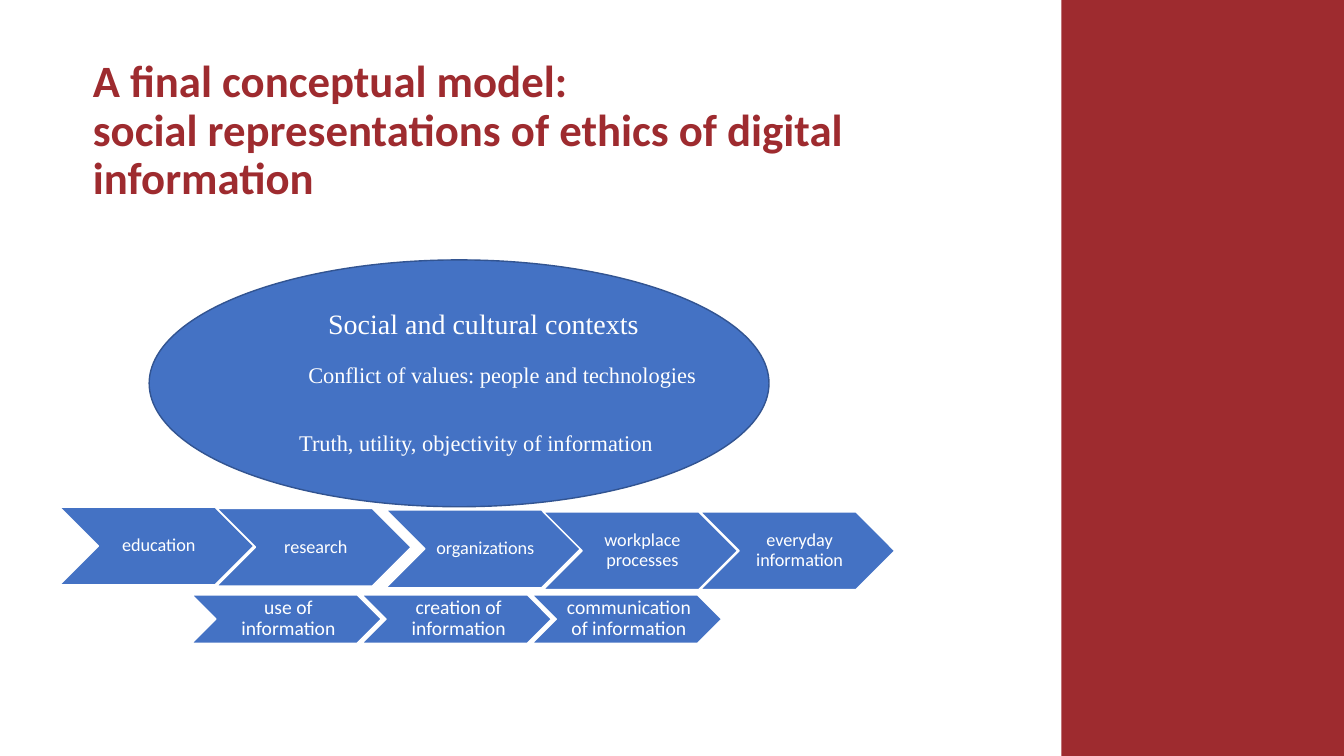
from pptx import Presentation
from pptx.dml.color import RGBColor
from pptx.enum.shapes import MSO_SHAPE
from pptx.enum.text import MSO_ANCHOR, MSO_AUTO_SIZE, PP_ALIGN
from pptx.util import Cm, Pt

RECT, OVAL, CHEVRON = MSO_SHAPE.RECTANGLE, MSO_SHAPE.OVAL, MSO_SHAPE.CHEVRON
MIDDLE = MSO_ANCHOR.MIDDLE
LEFT, CENTER = PP_ALIGN.LEFT, PP_ALIGN.CENTER
RED, BLUE, NAVY, WHITE = "9E2B2F", "4472C4", "325491", "FFFFFF"


def add_filled(kind, x, y, w, h, fill, line=None):
    sp = s.shapes.add_shape(kind, Cm(x), Cm(y), Cm(w), Cm(h))
    sp.shadow.inherit = False
    sp.fill.solid()
    sp.fill.fore_color.rgb = RGBColor.from_string(fill)
    if line:
        sp.line.color.rgb = RGBColor.from_string(line)
        sp.line.width = Pt(1)
    else:
        sp.line.fill.background()
    return sp


def add_run(p, text, font, size, color, bold=False):
    r = p.add_run()
    r.text = text
    r.font.name, r.font.size, r.font.bold = font, Pt(size), bold
    r.font.color.rgb = RGBColor.from_string(color)


prs = Presentation()
prs.slide_width, prs.slide_height = Cm(33.87), Cm(19.05)
s = prs.slides.add_slide(prs.slide_layouts[5])

# Side band
add_filled(RECT, 26.75, 0, 7.12, 19.05, RED)

# Title
title = s.shapes.title
title.left, title.top, title.width, title.height = Cm(2.34), Cm(1.96), Cm(22.56), Cm(2.72)
tf = title.text_frame
tf.word_wrap, tf.auto_size, tf.vertical_anchor = True, MSO_AUTO_SIZE.NONE, MIDDLE
tf.margin_left = 0
p = tf.paragraphs[0]
p.alignment, p.line_spacing = LEFT, 0.9
add_run(p, "A final conceptual model:", "Calibri", 32, RED, True)
p.add_line_break()
add_run(p, "social representations of ethics of digital information", "Calibri", 32, RED, True)

# Contexts ellipse and its labels
add_filled(OVAL, 3.76, 6.55, 15.62, 6.22, BLUE, NAVY)
for text, x, y, w, h, size, align in [
    ("Social and cultural contexts", 5.77, 7.6, 12.83, 1.32, 20, CENTER),
    ("Conflict of values: people and technologies", 7.52, 8.97, 15, 1, 16, LEFT),
    ("Truth, utility, objectivity of information", 7.29, 10.68, 12.37, 1, 16, LEFT),
]:
    tf = s.shapes.add_textbox(Cm(x), Cm(y), Cm(w), Cm(h)).text_frame
    tf.word_wrap = True
    p = tf.paragraphs[0]
    p.alignment = align
    add_run(p, text, "Times New Roman", size, WHITE)

# Chevron rows: domains above, information activities below
domains = [("education", 1.5, 12.78), ("research", 5.46, 12.81), ("organizations", 9.73, 12.85),
           ("workplace processes", 13.69, 12.9), ("everyday information", 17.65, 12.9)]
activities = [(text, 4.83 + 4.29 * i, 14.99) for i, text in enumerate(
    ["use of information", "creation of information", "communication of information"])]
for row, w, h, size in [(domains, 4.9, 1.96, 13), (activities, 4.78, 1.22, 14)]:
    for text, x, y in row:
        tf = add_filled(CHEVRON, x, y, w, h, BLUE, WHITE).text_frame
        tf.word_wrap, tf.vertical_anchor = True, MIDDLE
        tf.margin_left = Cm(0.15)
        tf.margin_right = tf.margin_top = tf.margin_bottom = Cm(0.05)
        p = tf.paragraphs[0]
        p.alignment, p.line_spacing = CENTER, 0.9
        add_run(p, text, "Calibri", size, WHITE)

prs.save("out.pptx")
